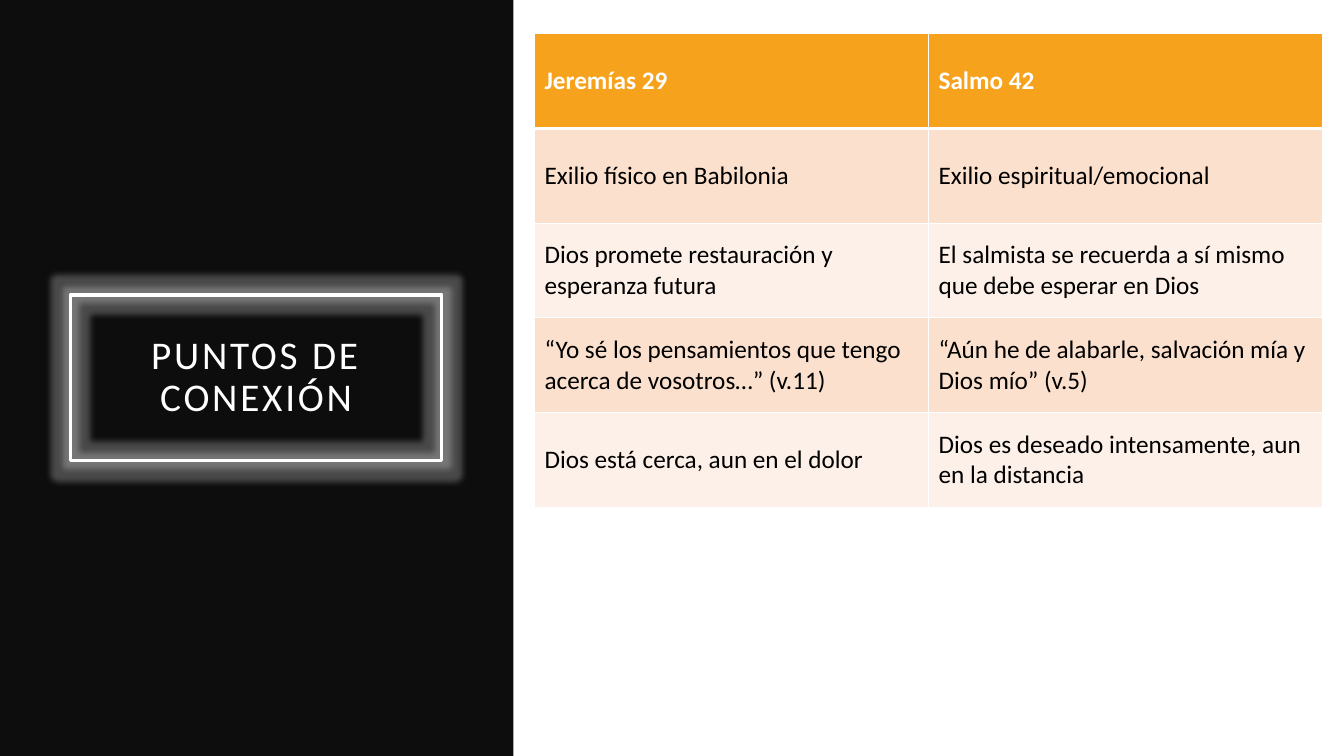
from dataclasses import dataclass

from lxml import etree
from pptx import Presentation
from pptx.dml.color import RGBColor
from pptx.enum.shapes import MSO_SHAPE
from pptx.enum.text import MSO_ANCHOR, PP_ALIGN
from pptx.oxml.ns import qn
from pptx.util import Emu, Inches, Pt

RECTANGLE = MSO_SHAPE.RECTANGLE
MIDDLE = MSO_ANCHOR.MIDDLE
CENTER = PP_ALIGN.CENTER


@dataclass(frozen=True)
class Theme:
    font: str = "Calibri"
    panel: str = "0D0D0D"
    light: str = "FFFFFF"
    ink: str = "000000"
    header: str = "F6A21D"
    bands: tuple = ("FBE0CD", "FDF0E8")
    title_size: int = 28
    table_size: int = 18
    title_spacing: int = 2
    frame_width: float = 2.5
    glow_radius: float = 9
    glow_opacity: int = 25


THEME = Theme()
TITLE = "PUNTOS DE CONEXIÓN"
CONNECTIONS = [
    ("Jeremías 29", "Salmo 42"),
    ("Exilio físico en Babilonia", "Exilio espiritual/emocional"),
    ("Dios promete restauración y esperanza futura",
     "El salmista se recuerda a sí mismo que debe esperar en Dios"),
    ("“Yo sé los pensamientos que tengo acerca de vosotros…” (v.11)",
     "“Aún he de alabarle, salvación mía y Dios mío” (v.5)"),
    ("Dios está cerca, aun en el dolor",
     "Dios es deseado intensamente, aun en la distancia"),
]


def rgb(color):
    return RGBColor.from_string(color)


def inner_box(box, left, top, width, height):
    """Box given as shares of another box."""
    x, y, w, h = box
    return (Emu(int(x + left * w)), Emu(int(y + top * h)),
            Emu(int(width * w)), Emu(int(height * h)))


def add_run(paragraph, text, size, color, bold=False):
    run = paragraph.add_run()
    run.text = text
    run.font.name = THEME.font
    run.font.size = Pt(size)
    run.font.bold = bold
    run.font.color.rgb = rgb(color)
    return run


def add_glow(shape):
    effects = shape._element.spPr.find(qn("a:effectLst"))
    glow = etree.SubElement(effects, qn("a:glow"), rad=str(Pt(THEME.glow_radius)))
    color = etree.SubElement(glow, qn("a:srgbClr"), val=THEME.light)
    etree.SubElement(color, qn("a:alpha"), val=str(THEME.glow_opacity * 1000))


def set_borders(cell, widths):
    """Put the four border lines ahead of the cell's fill."""
    properties = cell._tc.get_or_add_tcPr()
    for index, (side, width) in enumerate(widths.items()):
        line = etree.Element(qn(f"a:ln{side}"), w=str(Pt(width)))
        fill = etree.SubElement(line, qn("a:solidFill"))
        etree.SubElement(fill, qn("a:srgbClr"), val=THEME.light)
        properties.insert(index, line)


def build_title_panel(slide, box):
    # Dark side panel
    panel = slide.shapes.add_shape(RECTANGLE, *box)
    panel.shadow.inherit = False
    panel.fill.solid()
    panel.fill.fore_color.rgb = rgb(THEME.panel)
    panel.line.fill.background()

    # Glowing title frame
    frame = slide.shapes.add_shape(
        RECTANGLE, *inner_box(box, 0.1375, 0.39, 0.723, 0.219))
    frame.shadow.inherit = False
    frame.fill.background()
    frame.line.color.rgb = rgb(THEME.light)
    frame.line.width = Pt(THEME.frame_width)
    add_glow(frame)

    # Title text
    text = frame.text_frame
    text.word_wrap = True
    text.vertical_anchor = MIDDLE
    text.margin_left = text.margin_right = Inches(0.2)
    text.margin_top = text.margin_bottom = Inches(0.2)
    heading = text.paragraphs[0]
    heading.alignment = CENTER
    heading.line_spacing = 0.9
    run = add_run(heading, TITLE, THEME.title_size, THEME.light)
    run.font._element.set("spc", str(THEME.title_spacing * 100))


def build_connections_table(slide, box):
    width, height = box[2:]
    row_count, column_count = len(CONNECTIONS), len(CONNECTIONS[0])
    table = slide.shapes.add_table(row_count, column_count, *box).table
    for column in table.columns:
        column.width = Emu(width // column_count)
    for row in table.rows:
        row.height = Emu(height // row_count)

    for r, passages in enumerate(CONNECTIONS):
        is_header = r == 0
        fill = THEME.header if is_header else THEME.bands[(r - 1) % 2]
        ink = THEME.light if is_header else THEME.ink
        borders = {"L": 1, "R": 1, "T": 3 if r == 1 else 1,
                   "B": 3 if is_header else 1}
        for c, passage in enumerate(passages):
            cell = table.cell(r, c)
            cell.vertical_anchor = MIDDLE
            cell.fill.solid()
            cell.fill.fore_color.rgb = rgb(fill)
            set_borders(cell, borders)
            add_run(cell.text_frame.paragraphs[0], passage,
                    THEME.table_size, ink, is_header)


def main():
    deck = Presentation()
    deck.slide_width, deck.slide_height = Inches(13.33), Inches(7.5)
    slide = deck.slides.add_slide(deck.slide_layouts[6])
    slide.background.fill.solid()
    slide.background.fill.fore_color.rgb = rgb(THEME.light)

    page = (0, 0, deck.slide_width, deck.slide_height)
    build_title_panel(slide, inner_box(page, 0, 0, 0.382, 1))
    build_connections_table(
        slide, inner_box(page, 0.3977, 0.0445, 0.5865, 0.6267))
    deck.save("out.pptx")


if __name__ == "__main__":
    main()
